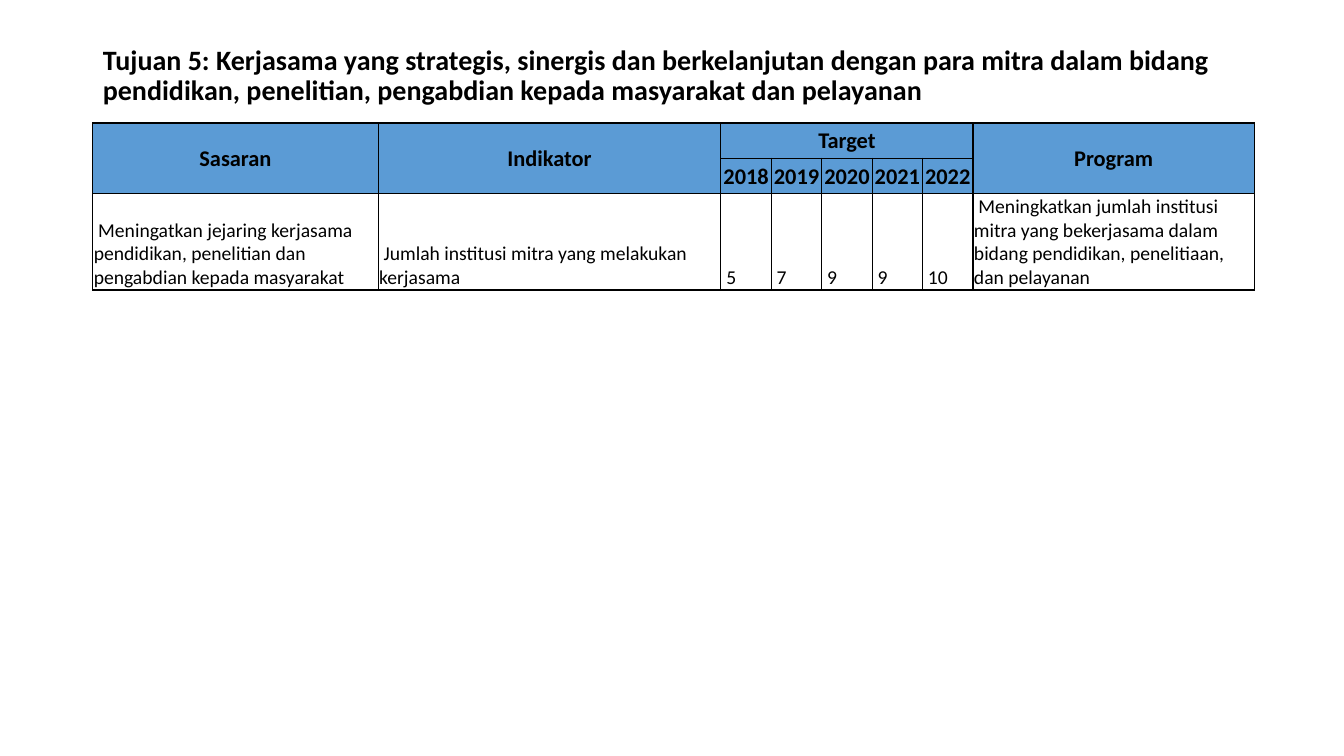
from pptx import Presentation
from pptx.dml.color import RGBColor
from pptx.enum.text import MSO_ANCHOR, PP_ALIGN
from pptx.oxml import parse_xml
from pptx.oxml.ns import nsdecls
from pptx.util import Inches, Pt

FONT = "Calibri"
BLACK = RGBColor(0x00, 0x00, 0x00)
BLUE = RGBColor(0x5B, 0x9B, 0xD5)

# Shared grid, in inches
LEFT, WIDTH = 0.92, 11.5
TITLE_TOP, TITLE_HEIGHT = 0.4, 0.71
TABLE_TOP = 1.22
YEARS = ["2018", "2019", "2020", "2021", "2022"]
COLUMNS = [2.83, 3.4] + [0.5] * len(YEARS) + [2.79]
ROWS = [0.35, 0.35, 0.95]
FIRST_YEAR, LAST_YEAR = 2, 1 + len(YEARS)

TITLE = ("Tujuan 5: Kerjasama yang strategis, sinergis dan berkelanjutan dengan para mitra "
         "dalam bidang pendidikan, penelitian, pengabdian kepada masyarakat dan pelayanan")
HEADINGS = {0: "Sasaran", 1: "Indikator", FIRST_YEAR: "Target", LAST_YEAR + 1: "Program"}
BODY = [
    " Meningatkan jejaring kerjasama pendidikan, penelitian dan pengabdian kepada masyarakat",
    " Jumlah institusi mitra yang melakukan kerjasama",
    " 5", " 7", " 9", " 9", " 10",
    " Meningkatkan jumlah institusi mitra yang bekerjasama dalam bidang pendidikan, "
    "penelitiaan, dan pelayanan",
]


def set_font(p, size, bold):
    p.font.name = FONT
    p.font.size = Pt(size)
    p.font.bold = bold
    p.font.color.rgb = BLACK


def add_title(slide, text):
    sp = slide.shapes.title
    sp.left, sp.top = Inches(LEFT), Inches(TITLE_TOP)
    sp.width, sp.height = Inches(WIDTH), Inches(TITLE_HEIGHT)
    tf = sp.text_frame
    tf.text = text
    tf.word_wrap = True
    tf.vertical_anchor = MSO_ANCHOR.MIDDLE
    p = tf.paragraphs[0]
    p.alignment = PP_ALIGN.LEFT
    p.line_spacing = 0.9
    set_font(p, 20, True)


def set_borders(cell):
    tc_pr = cell._tc.get_or_add_tcPr()
    for i, side in enumerate(("lnL", "lnR", "lnT", "lnB")):
        tc_pr.insert(i, parse_xml(
            f'<a:{side} {nsdecls("a")} w="{Pt(1)}"><a:solidFill>'
            f'<a:srgbClr val="{BLACK}"/></a:solidFill></a:{side}>'))


def format_cell(cell, header):
    cell.margin_left = cell.margin_right = cell.margin_top = Inches(0.01)
    cell.margin_bottom = 0
    cell.vertical_anchor = MSO_ANCHOR.MIDDLE if header else MSO_ANCHOR.BOTTOM
    if header:
        cell.fill.solid()
        cell.fill.fore_color.rgb = BLUE
    else:
        cell.fill.background()
    set_borders(cell)
    p = cell.text_frame.paragraphs[0]
    p.alignment = PP_ALIGN.CENTER if header else PP_ALIGN.LEFT
    set_font(p, 16 if header else 14, header)


def add_target_table(slide):
    table = slide.shapes.add_table(
        len(ROWS), len(COLUMNS), Inches(LEFT), Inches(TABLE_TOP),
        Inches(WIDTH), Inches(sum(ROWS))).table
    table.horz_banding = False
    for column, width in zip(table.columns, COLUMNS):
        column.width = Inches(width)
    for row, height in zip(table.rows, ROWS):
        row.height = Inches(height)

    # Two-row heading: Target spans the years, the others span both rows
    for c, text in HEADINGS.items():
        end = (0, LAST_YEAR) if c == FIRST_YEAR else (1, c)
        table.cell(0, c).merge(table.cell(*end))
        table.cell(0, c).text = text
    for c, year in enumerate(YEARS, FIRST_YEAR):
        table.cell(1, c).text = year

    # Goal row
    for c, text in enumerate(BODY):
        table.cell(2, c).text = text

    for r, row in enumerate(table.rows):
        for cell in row.cells:
            format_cell(cell, header=r < 2)


def main():
    prs = Presentation()
    prs.slide_width, prs.slide_height = Inches(13.33), Inches(7.5)
    slide = prs.slides.add_slide(prs.slide_layouts[5])
    add_title(slide, TITLE)
    add_target_table(slide)
    prs.save("out.pptx")


if __name__ == "__main__":
    main()
